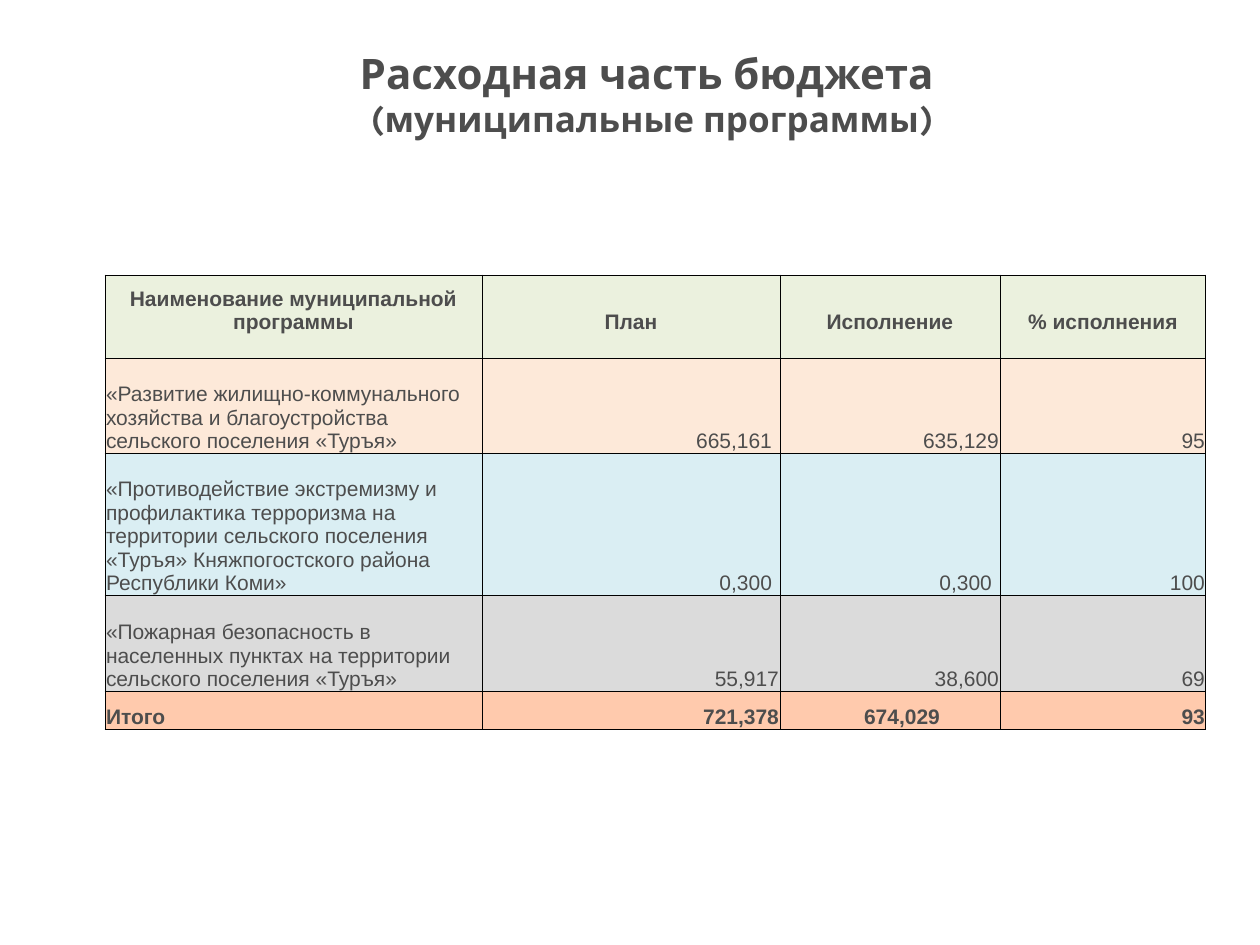
import pptx
import pptx.dml.color
import pptx.enum.text
import pptx.oxml
import pptx.oxml.ns
import pptx.util

RGBColor = pptx.dml.color.RGBColor
ALIGN = pptx.enum.text.PP_ALIGN
ANCHOR = pptx.enum.text.MSO_ANCHOR

PX_PER_INCH = 126
INK = RGBColor(0x4D, 0x4D, 0x4D)
BORDER = RGBColor(0, 0, 0)
GREEN = RGBColor(0xEB, 0xF1, 0xDE)
PEACH = RGBColor(0xFD, 0xE9, 0xD9)
BLUE = RGBColor(0xDA, 0xEE, 0xF3)
GREY = RGBColor(0xDB, 0xDB, 0xDB)
ORANGE = RGBColor(0xFF, 0xCA, 0xAD)

TITLE_LINES = [("Расходная часть бюджета ", 24), ("(муниципальные программы)", 20)]
COLUMN_WIDTHS = [377, 298, 220, 206]
ROWS = [
    (83, GREEN, ["Наименование муниципальной программы", "План", "Исполнение", "% исполнения"]),
    (95, PEACH, ["«Развитие жилищно-коммунального хозяйства и благоустройства "
                 "сельского поселения «Туръя»", "665,161", "635,129", "95"]),
    (142, BLUE, ["«Противодействие экстремизму и профилактика терроризма на территории "
                 "сельского поселения «Туръя» Княжпогостского района Республики Коми»",
                 "0,300", "0,300", "100"]),
    (96, GREY, ["«Пожарная безопасность в населенных пунктах на территории "
                "сельского поселения «Туръя»", "55,917", "38,600", "69"]),
    (38, ORANGE, ["Итого", "721,378", "674,029", "93"]),
]
RIGHT_INSETS = {(1, 1): 8, (2, 1): 8, (2, 2): 8, (4, 2): 60}


def px(length):
    """Turn px into EMU."""
    return pptx.util.Emu(round(length * 914400 / PX_PER_INCH))


def add_span(para, text, font_name, size, bold):
    """Add one run of text to a paragraph."""
    span = para.add_run()
    span.text = text
    span.font.name = font_name
    span.font.size = pptx.util.Pt(size)
    span.font.bold = bold
    span.font.color.rgb = INK


def add_title(page, left, top, width, height):
    """Place the two-line heading."""
    box = page.shapes.add_textbox(px(left), px(top), px(width), px(height))
    frame = box.text_frame
    frame.word_wrap = True
    frame.vertical_anchor = ANCHOR.MIDDLE
    frame.margin_top, frame.margin_bottom = px(8), 0
    para = frame.paragraphs[0]
    para.alignment = ALIGN.CENTER
    for index, (text, size) in enumerate(TITLE_LINES):
        if index:
            para.add_line_break()
        add_span(para, text, "Karla", size, True)


def add_borders(cell):
    """Draw a thin line on all four sides of a cell."""
    properties = cell._tc.get_or_add_tcPr()
    namespace = pptx.oxml.ns.nsdecls("a")
    for side in ("lnL", "lnR", "lnT", "lnB"):
        properties.append(pptx.oxml.parse_xml(
            f'<a:{side} {namespace} w="{pptx.util.Pt(0.5)}"><a:solidFill>'
            f'<a:srgbClr val="{BORDER}"/></a:solidFill></a:{side}>'))


def fill_cell(cell, text, fill, alignment, bold, right_inset, bottom_inset):
    """Set the text, insets, borders and fill of a cell."""
    cell.vertical_anchor = ANCHOR.BOTTOM
    cell.margin_left = cell.margin_top = px(1)
    cell.margin_right, cell.margin_bottom = px(right_inset), px(bottom_inset)
    add_borders(cell)
    cell.fill.solid()
    cell.fill.fore_color.rgb = fill
    para = cell.text_frame.paragraphs[0]
    para.alignment = alignment
    add_span(para, text, "Arial", 12, bold)


def add_programme_table(page, left, top):
    """Place the table of municipal programmes."""
    heights = [height for height, _, _ in ROWS]
    table = page.shapes.add_table(
        len(ROWS), len(COLUMN_WIDTHS), px(left), px(top),
        px(sum(COLUMN_WIDTHS)), px(sum(heights))).table
    table.first_row = table.horz_banding = False
    for column, width in zip(table.columns, COLUMN_WIDTHS):
        column.width = px(width)
    for row, (height, fill, texts) in enumerate(ROWS):
        table.rows[row].height = px(height)
        header = row == 0
        bold = header or row == len(ROWS) - 1
        for column, text in enumerate(texts):
            body_alignment = ALIGN.RIGHT if column else ALIGN.LEFT
            fill_cell(table.cell(row, column), text, fill,
                      ALIGN.CENTER if header else body_alignment, bold,
                      RIGHT_INSETS.get((row, column), 1), 24 if header else 0)


def main():
    """Build and save the deck."""
    deck = pptx.Presentation()
    deck.slide_width, deck.slide_height = px(1260), px(945)
    page = deck.slides.add_slide(deck.slide_layouts[6])
    add_title(page, 164, 55, 976, 69)
    add_programme_table(page, 105, 275)
    deck.save("out.pptx")


if __name__ == "__main__":
    main()
